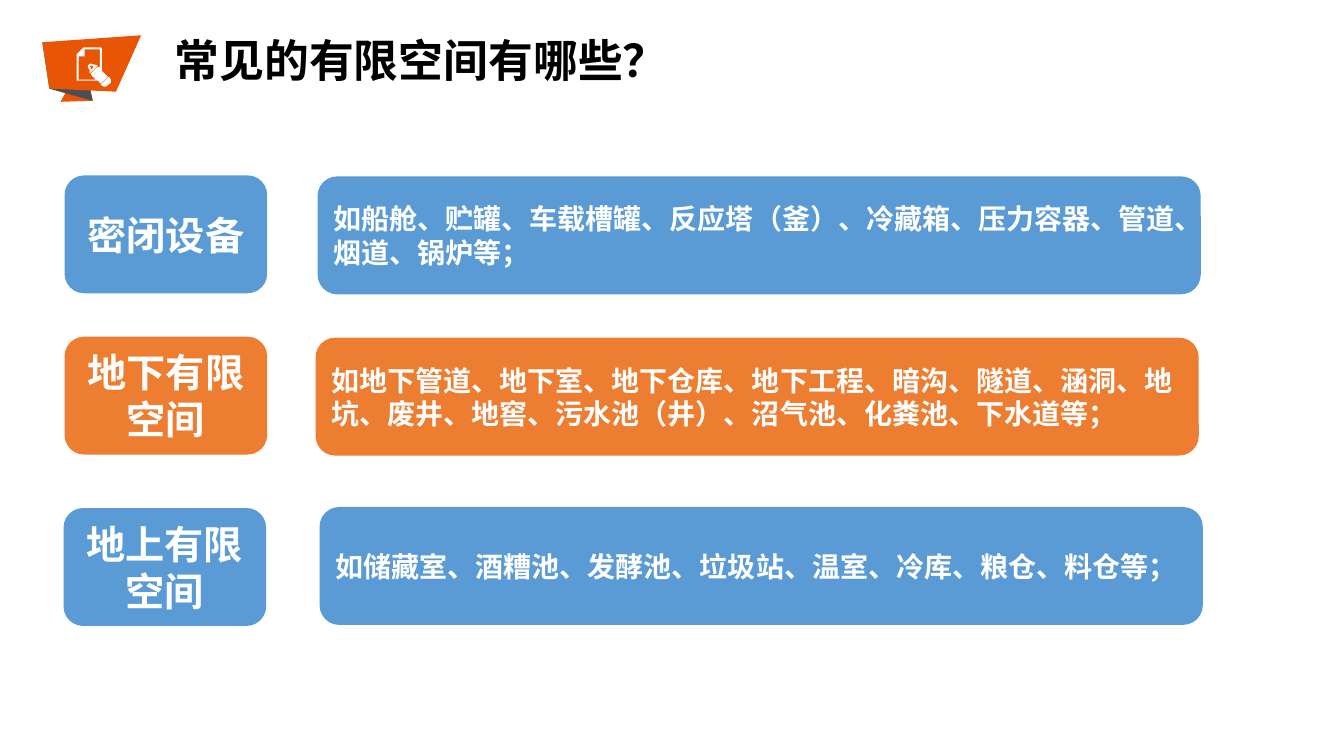
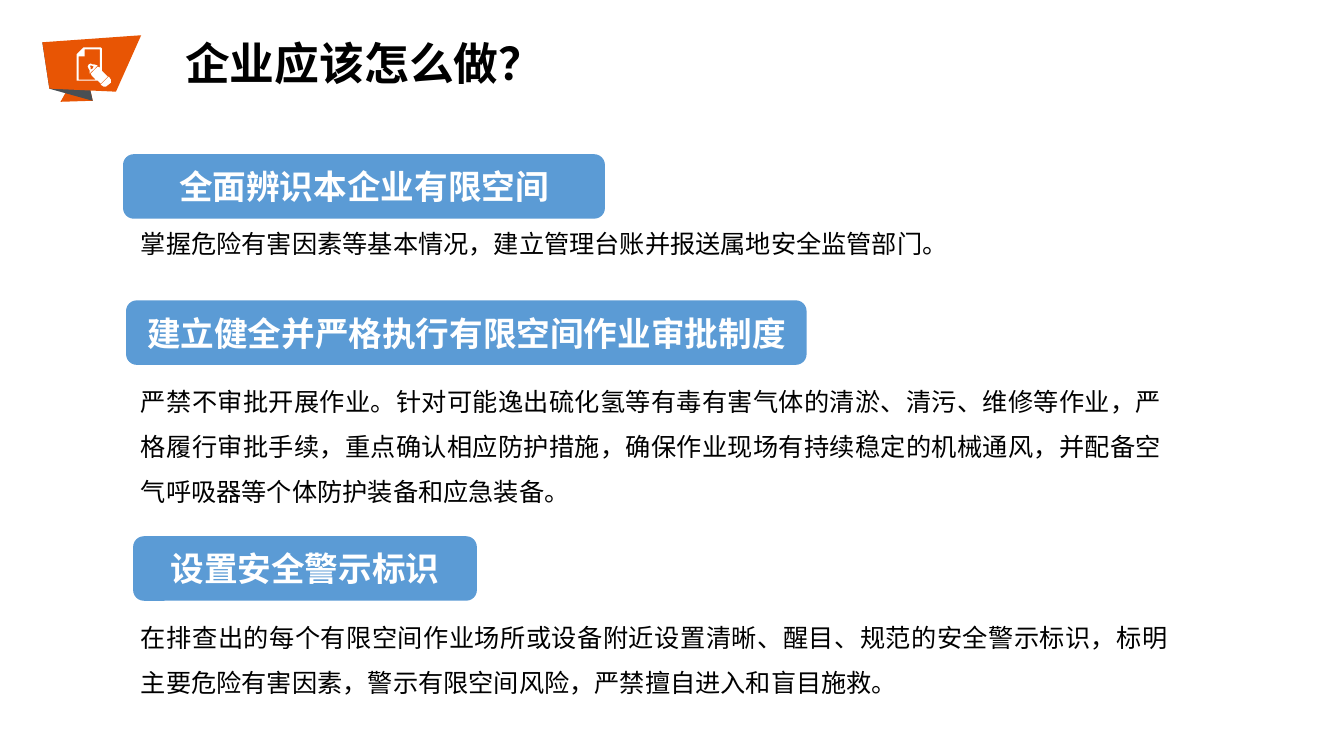
from lxml import etree
from pptx import Presentation
from pptx.dml.color import RGBColor
from pptx.enum import shapes, text
from pptx.oxml import ns
from pptx.util import Inches, Pt

FONT = "Noto Sans CJK SC"
BLACK = RGBColor(0x00, 0x00, 0x00)
WHITE = RGBColor(0xFF, 0xFF, 0xFF)
BLUE = RGBColor(0x5B, 0x9B, 0xD5)
ORANGE = RGBColor(0xED, 0x7D, 0x31)
FLAG = RGBColor(0xE8, 0x55, 0x04)
SLATE = RGBColor(0x49, 0x4F, 0x54)
ALIGN = text.PP_ALIGN

UNIT = Inches(0.01)
FOOT = [(92, 100), (83, 60), (60, 101)]
FOLD = [(83, 60), (42, 42), (49, 88), (92, 100)]
BOARD = [(140, 35), (42, 42), (49, 88), (115, 91)]
TIP = [(110, 82), (105, 86), (104, 86), (103, 86), (100, 84), (108, 76), (110, 79)]
PAGE = [(99, 49), (84, 49), (84, 55), (84, 56), (78, 56), (78, 79), (95, 79),
        (91, 75), (90, 73), (91, 72), (96, 67), (97, 66), (99, 67), (99, 68)]
FRAME = [(101, 82), (100, 83), (99, 82), (97, 80), (77, 80), (76, 80), (76, 55),
         (76, 54), (83, 47), (100, 47), (101, 48), (101, 70), (106, 75),
         (107, 76), (106, 77)]
HOLE = [(91, 65), (90, 65), (89, 65), (90, 67), (90, 69), (92, 68), (93, 66)]
NIB = [(93, 69), (92, 70), (89, 73), (89, 70), (88, 68), (87, 66), (88, 64),
       (90, 63), (92, 64), (94, 64), (97, 65), (95, 67)]
ICON = [
    ([FOOT], FLAG),
    ([FOLD], SLATE),
    ([BOARD], FLAG),
    ([TIP, PAGE, FRAME, HOLE, NIB], WHITE),
]

SPACES = [
    ("密闭设备", "如船舱、贮罐、车载槽罐、反应塔（釜）、冷藏箱、压力容器、管道、烟道、锅炉等；",
     BLUE, (0.64, 1.74), (3.15, 1.75)),
    ("地下有限空间", "如地下管道、地下室、地下仓库、地下工程、暗沟、隧道、涵洞、地坑、废井、"
     "地窖、污水池（井）、沼气池、化粪池、下水道等；",
     ORANGE, (0.64, 3.34), (3.13, 3.35)),
    ("地上有限空间", "如储藏室、酒糟池、发酵池、垃圾站、温室、冷库、粮仓、料仓等；",
     BLUE, (0.63, 5.04), (3.17, 5.03)),
]

DUTIES = [
    ("全面辨识本企业有限空间", (1.22, 1.53, 4.78, 0.64)),
    ("建立健全并严格执行有限空间作业审批制度", (1.25, 2.98, 6.75, 0.64)),
    ("设置安全警示标识", (1.32, 5.32, 3.41, 0.64)),
]

NOTES = [
    ("掌握危险有害因素等基本情况，建立管理台账并报送属地安全监管部门。",
     (1.3, 2.22, 10.34, 0.4), ALIGN.LEFT, 0, 1),
    ("严禁不审批开展作业。针对可能逸出硫化氢等有毒有害气体的清淤、清污、维修等作业，"
     "严格履行审批手续，重点确认相应防护措施，确保作业现场有持续稳定的机械通风，"
     "并配备空气呼吸器等个体防护装备和应急装备。",
     (0.92, 3.63, 10.7, 1.46), ALIGN.JUSTIFY, 0.38, 1.5),
    ("在排查出的每个有限空间作业场所或设备附近设置清晰、醒目、规范的安全警示标识，"
     "标明主要危险有害因素，警示有限空间风险，严禁擅自进入和盲目施救。",
     (0.99, 5.97, 10.7, 1.01), ALIGN.JUSTIFY, 0.31, 1.5),
]


def write(frame, words, size, color, bold, align):
    para = frame.paragraphs[0]
    para.alignment = align
    run = para.add_run()
    run.text = words
    font = run.font
    font.name, font.size, font.bold = FONT, Pt(size), bold
    font.color.rgb = color
    etree.SubElement(run._r.get_or_add_rPr(), ns.qn("a:ea"), typeface=FONT)
    return para


def paint(shape, color):
    shape.shadow.inherit = False
    shape.fill.solid()
    shape.fill.fore_color.rgb = color
    shape.line.fill.background()


def add_box(slide, words, area, color, size, align=ALIGN.CENTER):
    box = slide.shapes.add_shape(
        shapes.MSO_SHAPE.ROUNDED_RECTANGLE, *map(Inches, area))
    paint(box, color)
    frame = box.text_frame
    frame.word_wrap = True
    frame.vertical_anchor = text.MSO_ANCHOR.MIDDLE
    write(frame, words, size, WHITE, True, align)


def add_text(slide, words, area, size, align, space, bold=False, wrap=True):
    frame = slide.shapes.add_textbox(*map(Inches, area)).text_frame
    frame.word_wrap = wrap
    frame.auto_size = text.MSO_AUTO_SIZE.SHAPE_TO_FIT_TEXT
    para = write(frame, words, size, BLACK, bold, align)
    para.line_spacing = space
    return para


def add_note(slide, words, area, align, indent, space):
    para = add_text(slide, words, area, 18, align, space)
    if indent:
        para._p.get_or_add_pPr().set("marL", str(Inches(indent)))


def add_icon(slide):
    for loops, color in ICON:
        pen = slide.shapes.build_freeform(*loops[0][0], scale=UNIT)
        for loop in loops:
            pen.move_to(*loop[0])
            pen.add_line_segments(loop[1:], close=True)
        paint(pen.convert_to_shape(), color)


def add_slide(deck, title, area):
    slide = deck.slides.add_slide(deck.slide_layouts[6])
    add_icon(slide)
    add_text(slide, title, area, 32, ALIGN.CENTER, Pt(24), bold=True, wrap=False)
    return slide


def main():
    deck = Presentation()
    deck.slide_width, deck.slide_height = Inches(13.33), Inches(7.5)

    slide = add_slide(deck, "常见的有限空间有哪些？", (1.61, 0.48, 5.14, 0.46))
    for name, cases, color, left, right in SPACES:
        add_box(slide, name, (*left, 2.01, 1.17), color, 28)
        add_box(slide, cases, (*right, 8.76, 1.17), color, 20, ALIGN.LEFT)

    slide = add_slide(deck, "企业应该怎么做？", (1.72, 0.51, 3.79, 0.46))
    for duty, area in DUTIES:
        add_box(slide, duty, area, BLUE, 24)
    for note in NOTES:
        add_note(slide, *note)

    deck.save("out.pptx")


if __name__ == "__main__":
    main()
